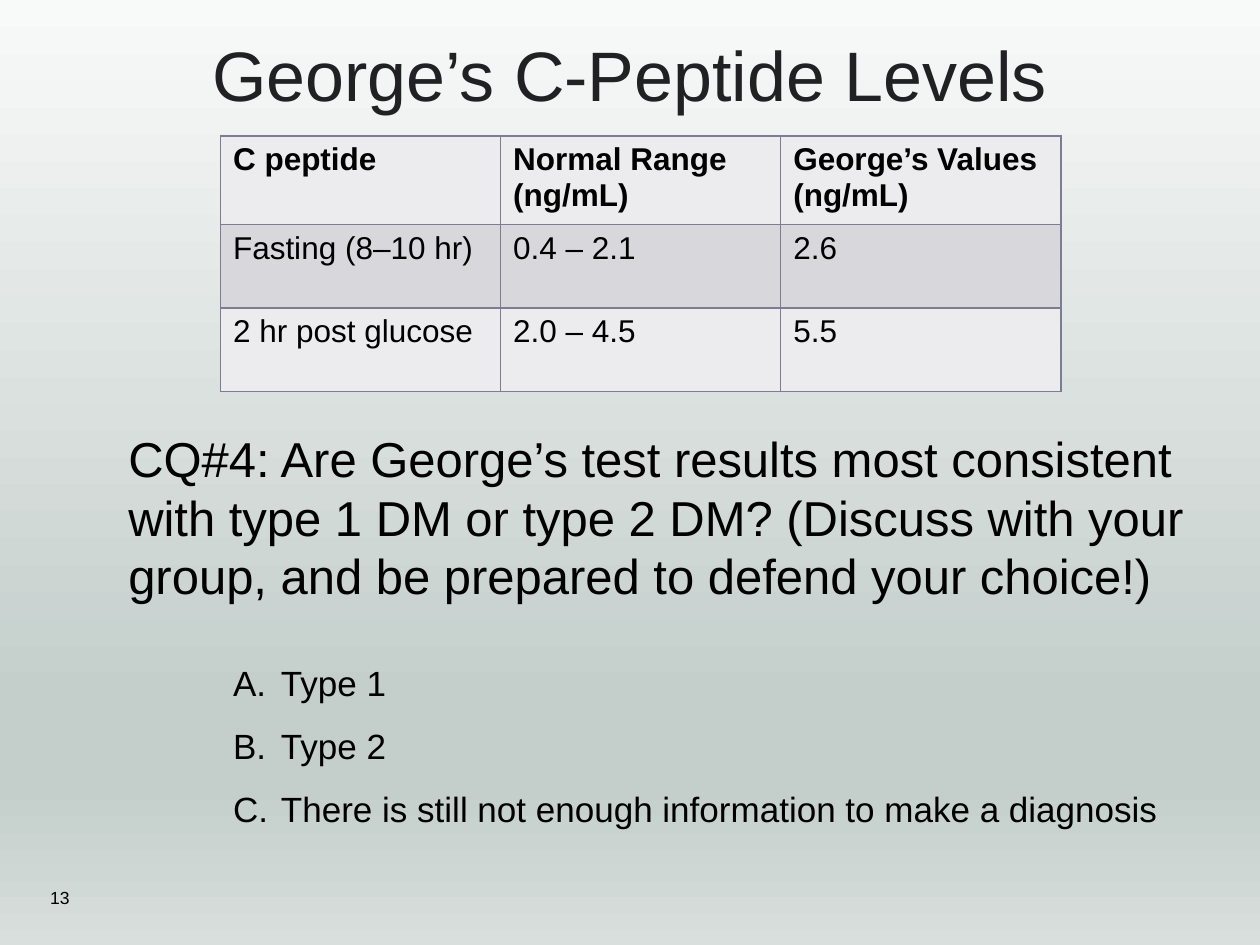
from dataclasses import dataclass

import pptx
import pptx.dml.color
import pptx.enum.text
import pptx.oxml
import pptx.oxml.ns
import pptx.util
from pptx.dml.color import RGBColor
from pptx.util import Inches, Pt

FONT = "Arial"
BLACK = RGBColor(0x00, 0x00, 0x00)
TITLE_GRAY = RGBColor(0x21, 0x21, 0x23)
OUTLINE_WHITE = RGBColor(0xFF, 0xFF, 0xFF)
BORDER = RGBColor(0x7C, 0x7D, 0x92)
LIGHT_BAND = RGBColor(0xEC, 0xEC, 0xEE)
DARK_BAND = RGBColor(0xD7, 0xD7, 0xDC)
BACKGROUND_STOPS = (
    (0, RGBColor(0xF8, 0xFA, 0xF9)),
    (74, RGBColor(0xC4, 0xCE, 0xCB)),
    (83, RGBColor(0xC4, 0xCE, 0xCB)),
    (100, RGBColor(0xD8, 0xDF, 0xDC)),
)
NAMESPACE = pptx.oxml.ns.nsdecls("a")

LEVELS = (
    ("C peptide", "Normal Range\n(ng/mL)", "George’s Values\n(ng/mL)"),
    ("Fasting (8–10 hr)", "0.4 – 2.1", "2.6"),
    ("2 hr post glucose", "2.0 – 4.5", "5.5"),
)
ANSWERS = ("Type 1", "Type 2", "There is still not enough information to make a diagnosis")


@dataclass
class Box:
    left: float
    top: float
    width: float
    height: float

    def lengths(self) -> tuple:
        return tuple(Inches(n) for n in (self.left, self.top, self.width, self.height))


def place(shape, box: Box) -> None:
    shape.left, shape.top, shape.width, shape.height = box.lengths()


def write(frame, text: str, size: float, color: RGBColor = BLACK, bold: bool = False) -> None:
    frame.text = text
    frame.word_wrap = True
    for paragraph in frame.paragraphs:
        for run in paragraph.runs:
            run.font.name = FONT
            run.font.size = Pt(size)
            run.font.bold = bold
            run.font.color.rgb = color


def paint_background(slide) -> None:
    fill = slide.background.fill
    fill.gradient()
    gradient = slide.background._cSld.find(".//" + pptx.oxml.ns.qn("a:gradFill"))
    stops = "".join(
        f'<a:gs pos="{percent * 1000}"><a:srgbClr val="{color}"/></a:gs>'
        for percent, color in BACKGROUND_STOPS
    )
    gradient.getparent().replace(gradient, pptx.oxml.parse_xml(
        f'<a:gradFill {NAMESPACE} rotWithShape="1"><a:gsLst>{stops}</a:gsLst>'
        '<a:lin ang="5400000" scaled="0"/></a:gradFill>'))


def add_title(slide) -> None:
    title = slide.shapes.title
    place(title, Box(0.33, 0.17, 9.33, 0.83))
    frame = title.text_frame
    write(frame, "George’s C-Peptide Levels", 40, TITLE_GRAY)
    frame.auto_size = pptx.enum.text.MSO_AUTO_SIZE.NONE
    frame.vertical_anchor = pptx.enum.text.MSO_ANCHOR.MIDDLE
    frame.paragraphs[0].alignment = pptx.enum.text.PP_ALIGN.CENTER
    properties = frame.paragraphs[0].runs[0]._r.get_or_add_rPr()
    properties.insert(0, pptx.oxml.parse_xml(
        f'<a:ln {NAMESPACE} w="{Pt(0.75)}"><a:solidFill><a:srgbClr val="{OUTLINE_WHITE}">'
        '<a:alpha val="10000"/></a:srgbClr></a:solidFill><a:prstDash val="solid"/></a:ln>'))
    properties.find(pptx.oxml.ns.qn("a:solidFill")).addnext(pptx.oxml.parse_xml(
        f'<a:effectLst {NAMESPACE}><a:outerShdw blurRad="38100" dist="25400" dir="2700000">'
        f'<a:srgbClr val="{BLACK}"><a:alpha val="40000"/></a:srgbClr>'
        '</a:outerShdw></a:effectLst>'))


def border_cell(cell) -> None:
    properties = cell._tc.get_or_add_tcPr()
    for position, side in enumerate("LRTB"):
        properties.insert(position, pptx.oxml.parse_xml(
            f'<a:ln{side} {NAMESPACE} w="{Pt(1)}"><a:solidFill>'
            f'<a:srgbClr val="{BORDER}"/></a:solidFill></a:ln{side}>'))


def add_levels_table(slide) -> None:
    box = Box(1.75, 1.08, 6.67, 1.99)
    table = slide.shapes.add_table(len(LEVELS), len(LEVELS[0]), *box.lengths()).table
    for row_index, values in enumerate(LEVELS):
        for column_index, value in enumerate(values):
            cell = table.cell(row_index, column_index)
            write(cell.text_frame, value, 18, bold=row_index == 0)
            cell.fill.solid()
            cell.fill.fore_color.rgb = DARK_BAND if row_index % 2 else LIGHT_BAND
            border_cell(cell)


def add_text(slide, box: Box, text: str, size: float):
    frame = slide.shapes.add_textbox(*box.lengths()).text_frame
    write(frame, text, size)
    return frame


def add_answers(slide) -> None:
    answers = slide.placeholders[1]
    place(answers, Box(1.75, 5.03, 7.67, 1.62))
    frame = answers.text_frame
    write(frame, "\n".join(ANSWERS), 20)
    frame.auto_size = pptx.enum.text.MSO_AUTO_SIZE.SHAPE_TO_FIT_TEXT
    for paragraph in frame.paragraphs:
        paragraph.line_spacing = 1.5
        paragraph.space_before = Pt(0)
        properties = paragraph._p.get_or_add_pPr()
        properties.set("marL", str(Inches(0.38)))
        properties.set("indent", str(-Inches(0.38)))
        for bullet in ('<a:buFont {} typeface="Arial"/>',
                       '<a:buAutoNum {} type="alphaUcPeriod"/>'):
            properties.append(pptx.oxml.parse_xml(bullet.format(NAMESPACE)))


def main() -> None:
    presentation = pptx.Presentation()
    presentation.slide_width = Inches(10)
    presentation.slide_height = Inches(7.5)
    slide = presentation.slides.add_slide(presentation.slide_layouts[1])
    paint_background(slide)
    add_title(slide)
    page_number = add_text(slide, Box(0.3, 6.92, 5.47, 0.4), "13", 10)
    page_number.vertical_anchor = pptx.enum.text.MSO_ANCHOR.MIDDLE
    add_levels_table(slide)
    question = add_text(
        slide, Box(0.92, 3.35, 8.83, 1.51),
        "CQ#4: Are George’s test results most consistent with type 1 DM or type 2 DM? "
        "(Discuss with your group, and be prepared to defend your choice!)", 28)
    question.auto_size = pptx.enum.text.MSO_AUTO_SIZE.SHAPE_TO_FIT_TEXT
    add_answers(slide)
    presentation.save("out.pptx")


if __name__ == "__main__":
    main()
